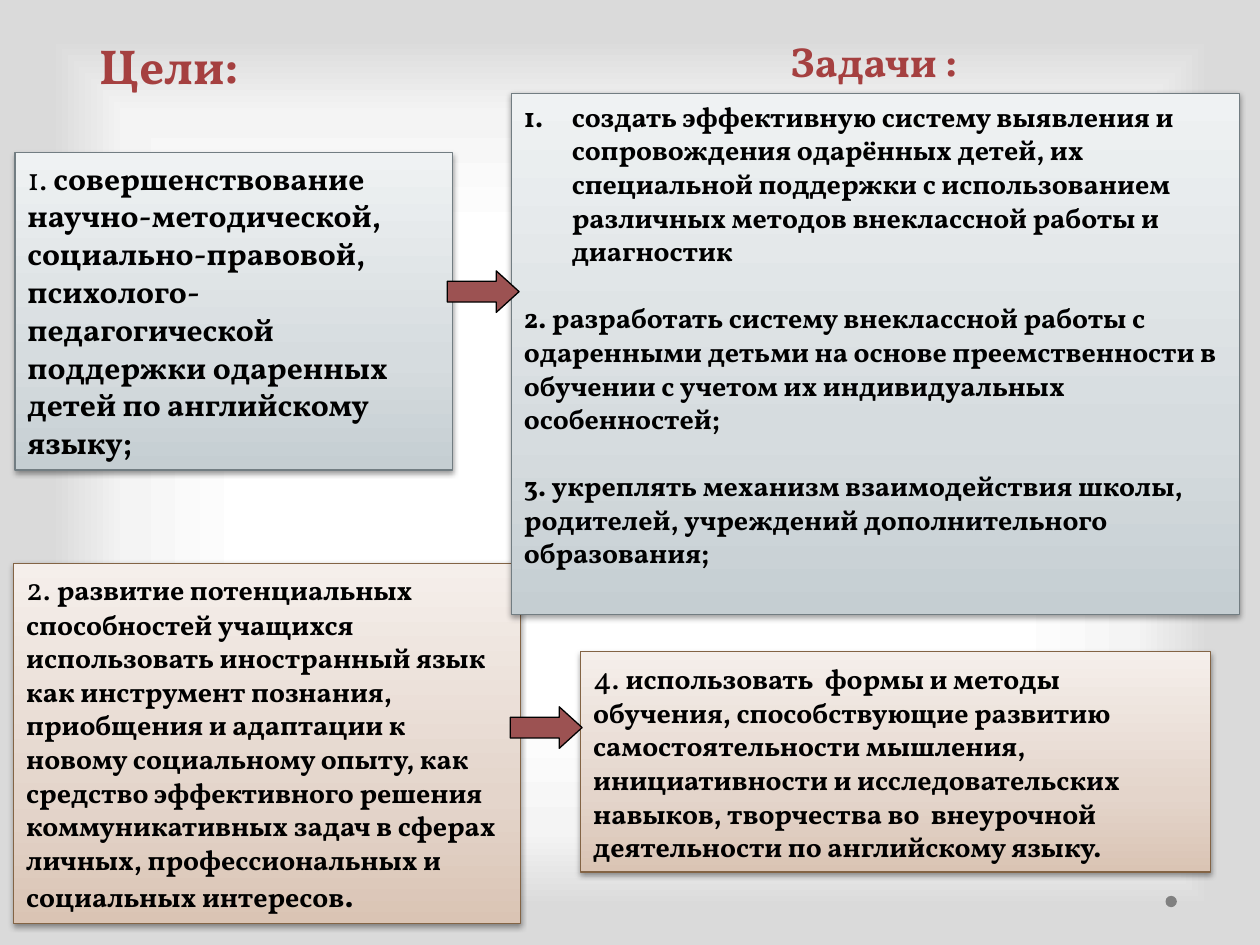
from lxml import etree
from pptx import Presentation
from pptx.dml.color import RGBColor
from pptx.enum import shapes, text
from pptx.oxml import ns, parse_xml
from pptx.util import Inches, Pt

FONT = "Vollkorn"
BLACK = RGBColor(0x00, 0x00, 0x00)
TITLE_RED = RGBColor(0xA5, 0x40, 0x40)
ARROW_RED = RGBColor(0x9C, 0x52, 0x52)
DOT_GRAY = RGBColor(0x80, 0x80, 0x80)
BLUE_LINE = RGBColor(0x72, 0x7D, 0x82)
BROWN_LINE = RGBColor(0x83, 0x64, 0x45)
BLUE_STOPS = [(0, RGBColor(0xC5, 0xCE, 0xD2)), (35, RGBColor(0xD6, 0xDC, 0xDF)),
              (100, RGBColor(0xEF, 0xF2, 0xF3))]
BROWN_STOPS = [(0, RGBColor(0xDA, 0xC4, 0xB4)), (35, RGBColor(0xE4, 0xD5, 0xCB)),
               (100, RGBColor(0xF5, 0xEF, 0xEB))]
PAGE_STOPS = [(50, RGBColor(0xFF, 0xFF, 0xFF)), (76, RGBColor(0xF4, 0xF4, 0xF4)),
              (92, RGBColor(0xDA, 0xDA, 0xDA))]
BLUE = (BLUE_STOPS, BLUE_LINE)
BROWN = (BROWN_STOPS, BROWN_LINE)

UPWARD = '<a:lin ang="16200000" scaled="0"/>'
FROM_CENTRE = ('<a:path path="shape"><a:fillToRect l="50000" t="50000" '
               'r="50000" b="50000"/></a:path>')
SHADOW = (f'<a:effectLst {ns.nsdecls("a")}><a:outerShdw blurRad="39370" dist="20320" '
          'dir="5400000" rotWithShape="0"><a:srgbClr val="000000">'
          '<a:alpha val="38000"/></a:srgbClr></a:outerShdw></a:effectLst>')


def set_gradient(fill, holder, stops, direction):
    """Give fill, whose XML lies inside holder, any number of (percent, colour) stops."""
    fill.gradient()
    old = holder.find(".//" + ns.qn("a:gradFill"))
    marks = "".join(f'<a:gs pos="{percent * 1000}"><a:srgbClr val="{colour}"/></a:gs>'
                    for percent, colour in stops)
    new = parse_xml(f'<a:gradFill {ns.nsdecls("a")} rotWithShape="1">'
                    f'<a:gsLst>{marks}</a:gsLst>{direction}</a:gradFill>')
    old.getparent().replace(old, new)


def add_run(para, words, size, bold, colour=BLACK):
    span = para.add_run()
    span.text = words
    span.font.name = FONT
    span.font.size = Pt(size)
    span.font.bold = bold
    span.font.color.rgb = colour


deck = Presentation()
deck.slide_width, deck.slide_height = Inches(10), Inches(7.5)
page = deck.slides.add_slide(deck.slide_layouts[6])
set_gradient(page.background.fill, page.element, PAGE_STOPS, FROM_CENTRE)

dot = page.shapes.add_shape(shapes.MSO_SHAPE.OVAL, Inches(9.25), Inches(7.11),
                            Inches(0.09), Inches(0.09))
dot.shadow.inherit = False
dot.fill.solid()
dot.fill.fore_color.rgb = DOT_GRAY
dot.line.fill.background()

# Each paragraph is a list of (words, size, bold) runs.
goal_support = [[
    ("1. ", 18, False),
    ("совершенствование научно-методической, социально-правовой, "
     "психолого-педагогической поддержки одаренных детей по английскому языку;", 18, True)]]
goal_potential = [[
    ("2. ", 18, False),
    ("развитие потенциальных способностей учащихся использовать иностранный язык "
     "как инструмент познания, приобщения и адаптации к новому социальному опыту, "
     "как средство эффективного решения коммуникативных задач в сферах личных, "
     "профессиональных и социальных интересов", 16, True),
    (".", 18, True)]]
main_tasks = [
    [("создать эффективную систему выявления и сопровождения одарённых детей, их "
      "специальной поддержки с использованием различных методов внеклассной работы "
      "и диагностик", 16, True)],
    [("2. разработать систему внеклассной работы с одаренными детьми на основе "
      "преемственности в обучении с учетом их индивидуальных особенностей;", 16, True)],
    [("3. укреплять механизм взаимодействия школы, родителей, учреждений "
      "дополнительного образования;", 16, True)]]
methods_task = [[
    ("4. ", 18, False),
    ("использовать  формы и методы обучения, способствующие развитию "
     "самостоятельности мышления, инициативности и исследовательских навыков, "
     "творчества во  внеурочной деятельности по английскому языку.", 16, True)]]

panels = [
    (0.11, 4.47, 4.02, 2.86, BROWN, goal_potential),
    (4.06, 0.74, 5.78, 4.14, BLUE, main_tasks),
    (0.12, 1.21, 3.47, 2.52, BLUE, goal_support),
    (4.61, 5.17, 5, 1.75, BROWN, methods_task),
]
for left, top, width, height, (stops, line_colour), paragraphs in panels:
    panel = page.shapes.add_shape(shapes.MSO_SHAPE.RECTANGLE, Inches(left), Inches(top),
                                  Inches(width), Inches(height))
    properties = panel.element.spPr
    set_gradient(panel.fill, properties, stops, UPWARD)
    panel.line.color.rgb = line_colour
    panel.line.width = Pt(0.75)
    properties.append(parse_xml(SHADOW))
    frame = panel.text_frame
    frame.word_wrap = True
    frame.vertical_anchor = text.MSO_ANCHOR.TOP
    for index, runs in enumerate(paragraphs):
        para = frame.add_paragraph() if index else frame.paragraphs[0]
        para.alignment = text.PP_ALIGN.LEFT
        if index:
            para.space_before = Pt(19.2)
        for words, size, bold in runs:
            add_run(para, words, size, bold)
    if paragraphs is main_tasks:
        numbering = frame.paragraphs[0]._p.get_or_add_pPr()
        numbering.set("marL", str(Inches(0.38)))
        numbering.set("indent", str(-Inches(0.38)))
        etree.SubElement(numbering, ns.qn("a:buFont"), typeface=FONT)
        etree.SubElement(numbering, ns.qn("a:buAutoNum"), type="arabicPeriod")

titles = [("Цели:", 0.67, 1.34, 0.57, 28, False), ("Задачи :", 5.94, 1.99, 0.5, 24, True)]
for words, left, width, height, size, wrap in titles:
    box = page.shapes.add_textbox(Inches(left), Inches(0.23), Inches(width), Inches(height))
    box.text_frame.word_wrap = wrap
    para = box.text_frame.paragraphs[0]
    para.alignment = text.PP_ALIGN.CENTER
    add_run(para, words, size, True, TITLE_RED)

for left, top in [(3.55, 2.15), (4.05, 5.61)]:
    arrow = page.shapes.add_shape(shapes.MSO_SHAPE.RIGHT_ARROW, Inches(left), Inches(top),
                                  Inches(0.57), Inches(0.33))
    arrow.adjustments[0] = 0.5
    arrow.adjustments[1] = 0.55
    arrow.shadow.inherit = False
    arrow.fill.solid()
    arrow.fill.fore_color.rgb = ARROW_RED
    arrow.line.color.rgb = BLACK
    arrow.line.width = Pt(0.75)

deck.save("out.pptx")
